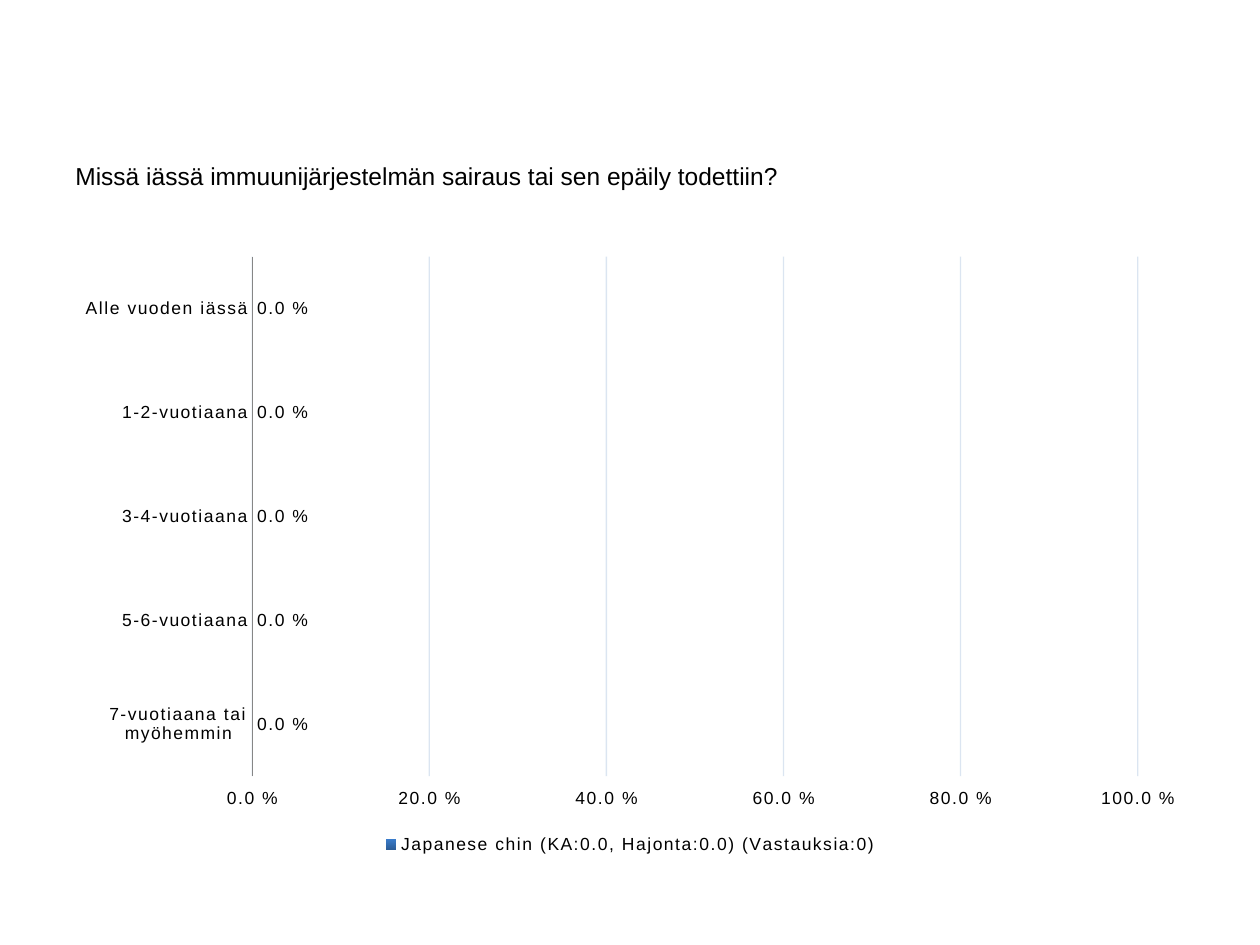
"""Build a slide with a survey question and its bar chart of answers by age."""
from dataclasses import dataclass

import pptx
import pptx.chart.data
import pptx.dml.color
import pptx.enum.chart
import pptx.oxml
import pptx.oxml.ns
import pptx.util
from pptx.util import Inches

QUESTION = "Missä iässä immuunijärjestelmän sairaus tai sen epäily todettiin?"
SERIES_NAME = "Japanese chin (KA:0.0, Hajonta:0.0) (Vastauksia:0)"
PERCENT_FORMAT = "0.0\\ %"
LETTER_SPACING = "100"


@dataclass(frozen=True)
class Answer:
    label: str
    share: float


ANSWERS = [
    Answer("Alle vuoden iässä", 0),
    Answer("1-2-vuotiaana", 0),
    Answer("3-4-vuotiaana", 0),
    Answer("5-6-vuotiaana", 0),
    Answer("7-vuotiaana tai myöhemmin", 0),
]


def color(value: str) -> pptx.dml.color.RGBColor:
    return pptx.dml.color.RGBColor.from_string(value)


def style_font(font, size: float) -> None:
    font.name = "Arial"
    font.size = pptx.util.Pt(size)
    font.color.rgb = color("000000")


def add_question(slide) -> None:
    box = slide.shapes.add_textbox(Inches(0.5), Inches(1.23), Inches(9), Inches(0.59))
    box.text_frame.word_wrap = True
    paragraph = box.text_frame.paragraphs[0]
    paragraph.text = QUESTION
    style_font(paragraph.font, 14)


def style_axes(chart) -> None:
    category_axis, value_axis = chart.category_axis, chart.value_axis
    for axis in (category_axis, value_axis):
        axis.major_tick_mark = pptx.enum.chart.XL_TICK_MARK.NONE
        axis.minor_tick_mark = pptx.enum.chart.XL_TICK_MARK.NONE
        style_font(axis.tick_labels.font, 10)
    category_axis.reverse_order = True
    category_axis.format.line.color.rgb = color("868686")
    category_axis.format.line.width = pptx.util.Pt(0.75)

    value_axis.minimum_scale = 0
    value_axis.maximum_scale = 1
    value_axis.major_unit = 0.2
    value_axis.tick_label_position = pptx.enum.chart.XL_TICK_LABEL_POSITION.HIGH
    value_axis.tick_labels.number_format = PERCENT_FORMAT
    value_axis.tick_labels.number_format_is_linked = False
    value_axis.format.line.fill.background()
    gridlines = value_axis.major_gridlines
    gridlines.format.line.color.rgb = color("4F81BD")
    gridlines.format.line.width = pptx.util.Pt(0.75)
    for grid_color in gridlines._xAx.xpath("c:majorGridlines//a:srgbClr"):
        alpha = pptx.oxml.parse_xml(f'<a:alpha {pptx.oxml.ns.nsdecls("a")} val="20000"/>')
        grid_color.append(alpha)


def style_bars(plot) -> None:
    plot.gap_width = 58
    plot.vary_by_categories = False
    fill = plot.series[0].format.fill
    fill.gradient()
    fill.gradient_angle = 90
    for stop, shade in zip(fill.gradient_stops, ("2C5D98", "3A7CCB")):
        stop.color.rgb = color(shade)

    plot.has_data_labels = True
    labels = plot.data_labels
    labels.show_value = True
    labels.number_format = PERCENT_FORMAT
    labels.number_format_is_linked = False
    labels.position = pptx.enum.chart.XL_LABEL_POSITION.OUTSIDE_END
    style_font(labels.font, 10)


def add_answer_chart(slide) -> None:
    data = pptx.chart.data.CategoryChartData(number_format=PERCENT_FORMAT)
    data.categories = [answer.label for answer in ANSWERS]
    data.add_series(SERIES_NAME, [answer.share for answer in ANSWERS])
    chart = slide.shapes.add_chart(
        pptx.enum.chart.XL_CHART_TYPE.BAR_CLUSTERED,
        Inches(0.5), Inches(1.94), Inches(9), Inches(4.88), data,
    ).chart
    chart.has_title = False
    chart.font.name = "Calibri"
    chart.font.size = pptx.util.Pt(10)
    chart.font.color.rgb = color("000000")
    style_axes(chart)
    style_bars(chart.plots[0])
    chart.has_legend = True
    chart.legend.position = pptx.enum.chart.XL_LEGEND_POSITION.BOTTOM
    chart.legend.include_in_layout = False
    style_font(chart.legend.font, 10)
    for properties in chart._chartSpace.iter(pptx.oxml.ns.qn("a:defRPr")):
        properties.set("spc", LETTER_SPACING)


def main() -> None:
    presentation = pptx.Presentation()
    presentation.slide_width = Inches(10)
    presentation.slide_height = Inches(7.5)
    slide = presentation.slides.add_slide(presentation.slide_layouts[6])
    add_question(slide)
    add_answer_chart(slide)
    presentation.save("out.pptx")


if __name__ == "__main__":
    main()
